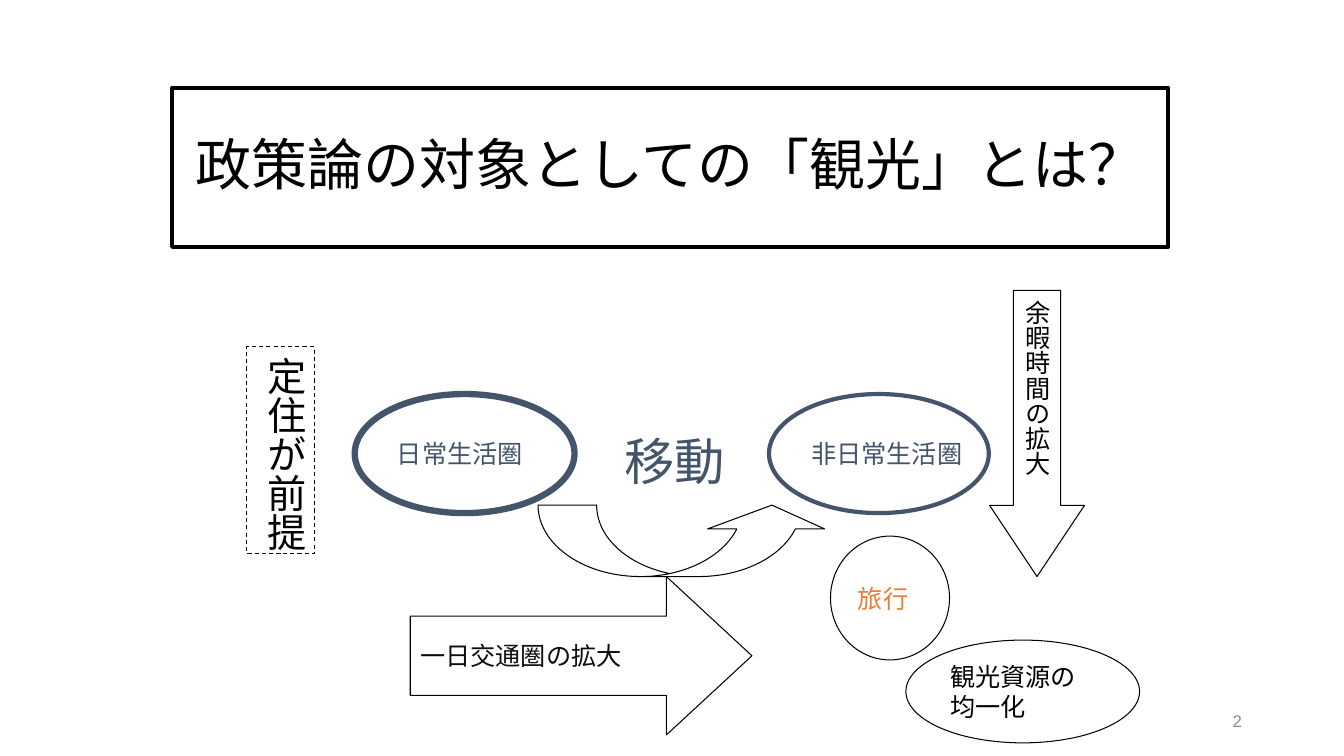
import pptx
import pptx.dml.color
import pptx.enum.dml
import pptx.enum.shapes
import pptx.enum.text
import pptx.util

Cm = pptx.util.Cm
Pt = pptx.util.Pt
SHAPE = pptx.enum.shapes.MSO_SHAPE
ANCHOR = pptx.enum.text.MSO_ANCHOR
ALIGN = pptx.enum.text.PP_ALIGN
FIT = pptx.enum.text.MSO_AUTO_SIZE
BLACK, WHITE, SLATE, ORANGE = "000000", "FFFFFF", "44546A", "ED7D31"


def rgb(value):
    """Return the colour for a hex string."""
    return pptx.dml.color.RGBColor.from_string(value)


def place(s, x, y, w, h):
    """Set position and size in centimetres."""
    s.left, s.top, s.width, s.height = Cm(x), Cm(y), Cm(w), Cm(h)


def write(s, text, size, color, align=ALIGN.LEFT, anchor=ANCHOR.MIDDLE,
          font="Calibri", vertical=False, wrap=False):
    """Fill a shape with uniformly formatted paragraphs."""
    tf = s.text_frame
    tf.text = text
    tf.auto_size = FIT.NONE
    tf.word_wrap = wrap
    tf.vertical_anchor = anchor
    if vertical:
        tf._txBody.bodyPr.set("vert", "eaVert")
    for p in tf.paragraphs:
        p.alignment = align
        p.font.name = font
        p.font.size = Pt(size)
        p.font.color.rgb = rgb(color)


def outline(s, fill=None, line=BLACK, width=0.75):
    """Set the fill and border of a shape."""
    if fill:
        s.fill.solid()
        s.fill.fore_color.rgb = rgb(fill)
    else:
        s.fill.background()
    s.line.color.rgb = rgb(line)
    s.line.width = Pt(width)


def add_shape(slide, kind, box, fill=None, line=BLACK, width=0.75, adjust=()):
    """Add an outlined preset shape without a shadow."""
    s = slide.shapes.add_shape(kind, *map(Cm, box))
    s.shadow.inherit = False
    outline(s, fill, line, width)
    for i, value in enumerate(adjust):
        s.adjustments[i] = value
    return s


def add_title(slide, x, y, w, h):
    """Place the framed title."""
    s = slide.shapes.title
    place(s, x, y, w, h)
    outline(s, WHITE, width=3)
    write(s, "政策論の対象としての「観光」とは？", 40, BLACK, ALIGN.CENTER, wrap=True)
    s.text_frame.paragraphs[0].line_spacing = 0.9


def add_movement(slide, x, y, w, h):
    """Draw the two living spheres and the movement between them."""
    sphere_w = 5.54
    spheres = [("日常生活圏", x, 4.5), ("非日常生活圏", x + w - sphere_w, 3)]
    for text, left, width in spheres:
        s = add_shape(slide, SHAPE.OVAL, (left, y, sphere_w, 3), None, SLATE, width)
        write(s, text, 18, SLATE)
    s = add_shape(slide, SHAPE.CURVED_DOWN_ARROW, (x + 4.62, y + h - 1.8, 7.37, 1.8),
                  adjust=(0.82, 1.639, 0.333))
    s._element.spPr.xfrm.set("flipV", "1")
    s = slide.shapes.add_textbox(Cm(x + 6.55), Cm(y + 0.79), Cm(3.05), Cm(1.78))
    write(s, "移動", 36, SLATE, anchor=ANCHOR.TOP)


def add_premise(slide, x, y, w, h):
    """Draw the dashed box with the vertical premise."""
    s = add_shape(slide, SHAPE.RECTANGLE, (x, y, w, h))
    s.line.dash_style = pptx.enum.dml.MSO_LINE.DASH
    write(s, "定住が前提", 28, BLACK, anchor=ANCHOR.TOP, vertical=True)


def add_factors(slide, x, y, w, h):
    """Draw the travel circle and the three factors around it."""
    s = add_shape(slide, SHAPE.RIGHT_ARROW, (x, y + 7.21, 8.61, 3.99), WHITE,
                  adjust=(0.5, 0.54))
    write(s, "一日交通圏の拡大", 18, "0D0D0D")
    s = add_shape(slide, SHAPE.OVAL, (x + 10.59, y + 6.19, 3, 3.12), WHITE)
    write(s, "旅行", 18, ORANGE)
    s = add_shape(slide, SHAPE.DOWN_ARROW, (x + 14.6, y, 2.39, 7.21),
                  adjust=(0.5, 0.75))
    write(s, "余暇時間の拡大", 18, BLACK, vertical=True)
    s = add_shape(slide, SHAPE.OVAL, (x + w - 5.89, y + h - 2.59, 5.89, 2.59), WHITE)
    write(s, "観光資源の\n均一化", 18, BLACK)


def add_number(slide, x, y, w, h):
    """Place the page number."""
    s = slide.shapes.add_textbox(Cm(x), Cm(y), Cm(w), Cm(h))
    write(s, "2", 12, "8C8C8C", ALIGN.RIGHT, font="Arial", wrap=True)


def main():
    """Build and save the slide."""
    prs = pptx.Presentation()
    prs.slide_width, prs.slide_height = Cm(33.87), Cm(19.05)
    slide = prs.slides.add_slide(prs.slide_layouts[5])
    add_number(slide, 23.93, 17.65, 7.62, 1.02)
    add_title(slide, 4.34, 2.21, 25.1, 4.01)
    add_movement(slide, 8.94, 9.93, 15.98, 4.6)
    add_premise(slide, 6.22, 8.74, 1.7, 5.21)
    add_factors(slide, 10.34, 7.32, 18.38, 11.4)
    prs.save("out.pptx")


if __name__ == "__main__":
    main()
